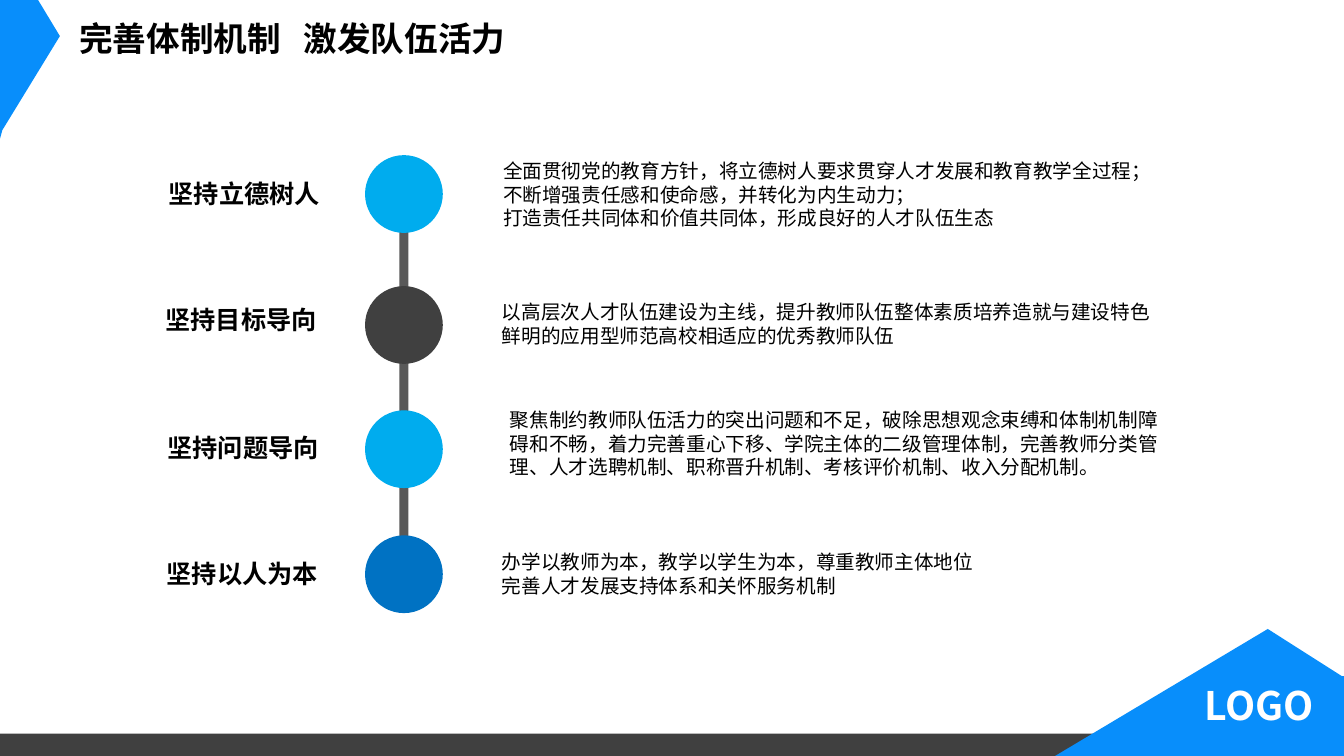
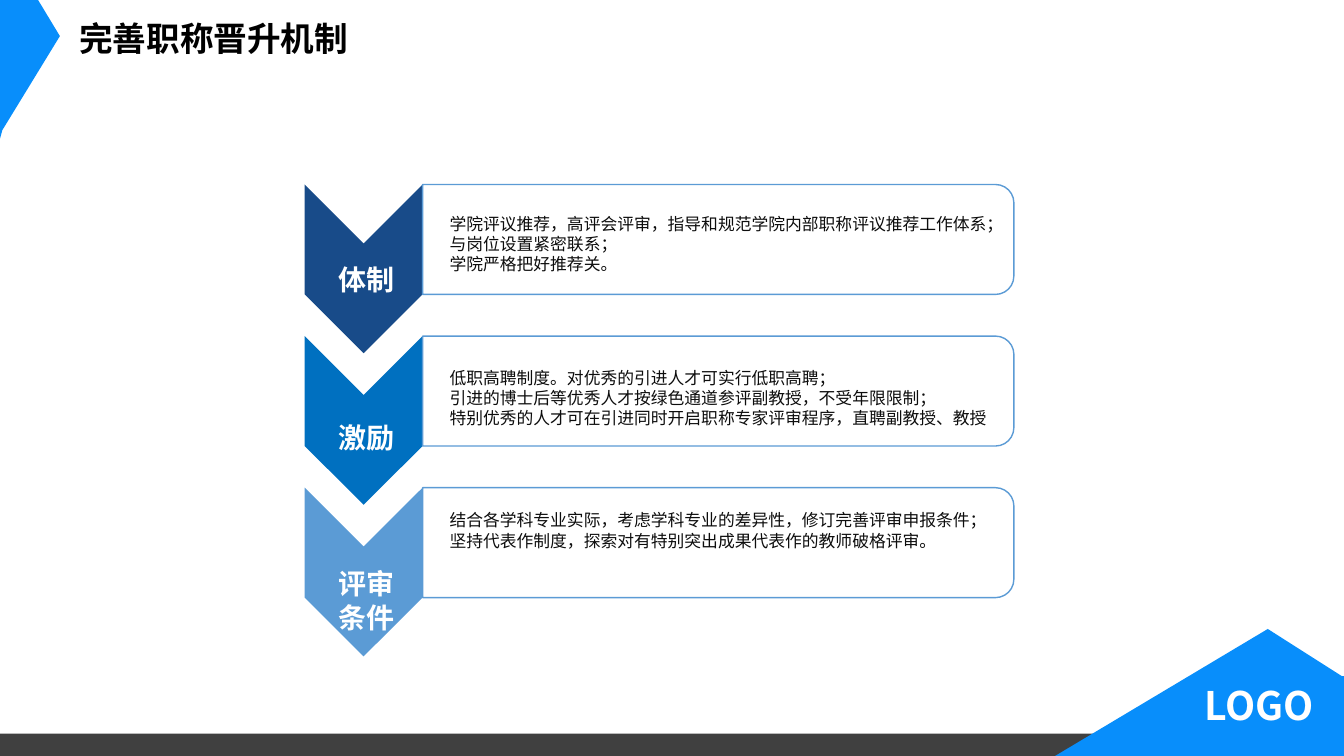
from dataclasses import dataclass

from lxml import etree
from pptx import Presentation
from pptx.dml.color import RGBColor
from pptx.enum.shapes import MSO_SHAPE
from pptx.enum.text import MSO_AUTO_SIZE
from pptx.oxml.ns import qn
from pptx.util import Cm, Pt

RECTANGLE = MSO_SHAPE.RECTANGLE
OVAL = MSO_SHAPE.OVAL
RIGHT_ROUNDED = MSO_SHAPE.ROUND_2_SAME_RECTANGLE
FIT_TEXT = MSO_AUTO_SIZE.SHAPE_TO_FIT_TEXT


@dataclass(frozen=True)
class Theme:
    font: str = "Noto Sans CJK SC"
    black: str = "000000"
    white: str = "FFFFFF"
    ink: str = "0D0D0D"
    charcoal: str = "404040"
    stem: str = "595959"
    accent: str = "088EFB"
    sky: str = "00ACEE"
    ocean: str = "0072C3"
    navy: str = "184B89"
    blue: str = "0070C0"
    soft_blue: str = "5B9BD5"
    title_size: int = 24
    logo_size: int = 28
    label_size: int = 18
    detail_size: int = 14
    chevron_size: int = 20
    card_size: int = 12
    title_gap: int = 1080  # extra space between title halves, 1/100 pt


@dataclass(frozen=True)
class Box:
    """A region in centimetres."""
    left: float
    top: float
    width: float
    height: float

    def inner(self, left, top, width, height):
        return Box(self.left + left, self.top + top, width, height)

    def lengths(self):
        return [Cm(v) for v in (self.left, self.top, self.width, self.height)]


THEME = Theme()
PAGE = Box(0, 0, 33.87, 19.05)

# Label, circle colour, circle top, label offset, detail offset, detail lines;
# offsets are (left, top), the tops counted from the circle's top
PRINCIPLES = [
    ("坚持立德树人", THEME.sky, 0, (0.05, 0.46), (8.48, -0.02),
     ["全面贯彻党的教育方针，将立德树人要求贯穿人才发展和教育教学全过程；",
      "不断增强责任感和使命感，并转化为内生动力；",
      "打造责任共同体和价值共同体，形成良好的人才队伍生态"]),
    ("坚持目标导向", THEME.charcoal, 3.3, (-0.03, 0.33), (8.45, 0.23),
     ["以高层次人才队伍建设为主线，提升教师队伍整体素质培养造就与建设特色"
      "鲜明的应用型师范高校相适应的优秀教师队伍"]),
    ("坚持问题导向", THEME.sky, 6.43, (0.02, 0.43), (8.65, -0.18),
     ["聚焦制约教师队伍活力的突出问题和不足，破除思想观念束缚和体制机制障"
      "碍和不畅，着力完善重心下移、学院主体的二级管理体制，完善教师分类管"
      "理、人才选聘机制、职称晋升机制、考核评价机制、收入分配机制。"]),
    ("坚持以人为本", THEME.ocean, 9.58, (0, 0.45), (8.45, 0.25),
     ["办学以教师为本，教学以学生为本，尊重教师主体地位",
      "完善人才发展支持体系和关怀服务机制"]),
]

# Label, colour, label top, detail top, detail lines
PROMOTION_STEPS = [
    ("体制", THEME.navy, 1.85, 0.61,
     ["学院评议推荐，高评会评审，指导和规范学院内部职称评议推荐工作体系；",
      "与岗位设置紧密联系；",
      "学院严格把好推荐关。"]),
    ("激励", THEME.blue, 1.99, 0.67,
     ["低职高聘制度。对优秀的引进人才可实行低职高聘；",
      "引进的博士后等优秀人才按绿色通道参评副教授，不受年限限制；",
      "特别优秀的人才可在引进同时开启职称专家评审程序，直聘副教授、教授"]),
    ("评审条件", THEME.soft_blue, 1.86, 0.44,
     ["结合各学科专业实际，考虑学科专业的差异性，修订完善评审申报条件；",
      "坚持代表作制度，探索对有特别突出成果代表作的教师破格评审。"]),
]


def paint(shape, fill, line=None):
    shape.shadow.inherit = False
    shape.fill.solid()
    shape.fill.fore_color.rgb = RGBColor.from_string(fill)
    if line:
        shape.line.color.rgb = RGBColor.from_string(line)
        shape.line.width = Pt(1)
    else:
        shape.line.fill.background()
    return shape


def add_preset(slide, kind, box, fill, line=None):
    return paint(slide.shapes.add_shape(kind, *box.lengths()), fill, line)


def add_polygon(slide, box, points, fill):
    corners = [(Cm(box.left + x), Cm(box.top + y)) for x, y in points]
    builder = slide.shapes.build_freeform(*corners[0], scale=1.0)
    builder.add_line_segments(corners[1:], close=True)
    return paint(builder.convert_to_shape(), fill)


def format_run(run, size, color, bold):
    run.font.name = THEME.font
    run.font.size = Pt(size)
    run.font.bold = bold
    run.font.color.rgb = RGBColor.from_string(color)
    # East Asian typeface follows the Latin one
    east_asian = etree.SubElement(run.font._element, qn("a:ea"))
    east_asian.set("typeface", THEME.font)


def add_text(slide, box, lines, size, color=THEME.black, bold=False):
    text_frame = slide.shapes.add_textbox(*box.lengths()).text_frame
    text_frame.word_wrap = True
    text_frame.auto_size = FIT_TEXT
    text_frame.text = "\n".join(lines)
    for paragraph in text_frame.paragraphs:
        for run in paragraph.runs:
            format_run(run, size, color, bold)
    return text_frame


def add_title(slide, box, title):
    first, gap, second = title.partition(" ")
    text_frame = add_text(slide, box, [first], THEME.title_size, bold=True)
    for part in filter(None, (gap, second)):
        run = text_frame.paragraphs[0].add_run()
        run.text = part
        format_run(run, THEME.title_size, THEME.black, True)
        if part == gap:
            run.font._element.set("spc", str(THEME.title_gap))


def add_frame(presentation, title):
    """New slide with band, corners, mark and title."""
    slide = presentation.slides.add_slide(presentation.slide_layouts[6])
    add_preset(slide, RECTANGLE, PAGE.inner(0, 18.49, 28.1, 0.56), THEME.charcoal)
    add_polygon(slide, PAGE.inner(26.59, 15.85, 7.28, 3.2),
                [(0, 3.2), (5.36, 0), (7.23, 1.19), (7.28, 1.19), (7.28, 3.2)],
                THEME.accent)
    add_polygon(slide, PAGE,
                [(0, 0), (0.96, 0), (1.51, 0.91), (0.06, 3.28), (0, 3.5)],
                THEME.accent)
    add_text(slide, PAGE.inner(30.1, 17.04, 3.58, 1.45), ["LOGO"],
             THEME.logo_size, THEME.white, bold=True)
    add_title(slide, PAGE.inner(1.75, 0.33, 12, 1.27), title)
    return slide


def add_timeline(slide, box):
    diameter, circle_left = 1.96, 5.25
    radius = diameter / 2
    stem_width = 0.23
    # Stem behind the circles
    stem_left = circle_left + radius - stem_width / 2
    add_preset(slide, RECTANGLE,
               box.inner(stem_left, radius, stem_width, box.height - diameter),
               THEME.stem)
    for label, color, top, label_at, detail_at, lines in PRINCIPLES:
        add_preset(slide, OVAL, box.inner(circle_left, top, diameter, diameter), color)
        add_text(slide, box.inner(label_at[0], top + label_at[1], 4.6, 1.02),
                 [label], THEME.label_size, bold=True)
        add_text(slide, box.inner(detail_at[0], top + detail_at[1], 16.94, 2),
                 lines, THEME.detail_size)


def add_step(slide, box, label, color, label_top, detail_top, lines):
    chevron_width, card_height = 2.97, 2.77
    middle = chevron_width / 2
    card_width = box.width - chevron_width
    # Downward chevron
    add_polygon(slide, box,
                [(0, 0), (middle, middle), (chevron_width, 0),
                 (chevron_width, card_height), (middle, box.height),
                 (0, card_height)], color)
    # Card, turned so that its rounded side faces right
    shift = (card_width - card_height) / 2
    card = add_preset(slide, RIGHT_ROUNDED,
                      box.inner(chevron_width + shift, -shift, card_height, card_width),
                      THEME.white, THEME.soft_blue)
    card.rotation = 90
    add_text(slide, box.inner(3.4, detail_top, 14.1, 1.8), lines,
             THEME.card_size, THEME.ink)
    add_text(slide, box.inner(0.59, label_top, 2.39, 1.12), [label],
             THEME.chevron_size, THEME.white, bold=True)


def add_steps(slide, box):
    pitch, step_height = 3.82, 4.25
    for index, step in enumerate(PROMOTION_STEPS):
        add_step(slide, box.inner(0, index * pitch, box.width, step_height), *step)


def main():
    presentation = Presentation()
    presentation.slide_width = Cm(PAGE.width)
    presentation.slide_height = Cm(PAGE.height)
    slide = add_frame(presentation, "完善体制机制 激发队伍活力")
    add_timeline(slide, PAGE.inner(3.95, 3.91, 25.6, 11.54))
    slide = add_frame(presentation, "完善职称晋升机制")
    add_steps(slide, PAGE.inner(7.68, 4.65, 17.87, 11.89))
    presentation.save("out.pptx")


if __name__ == "__main__":
    main()
